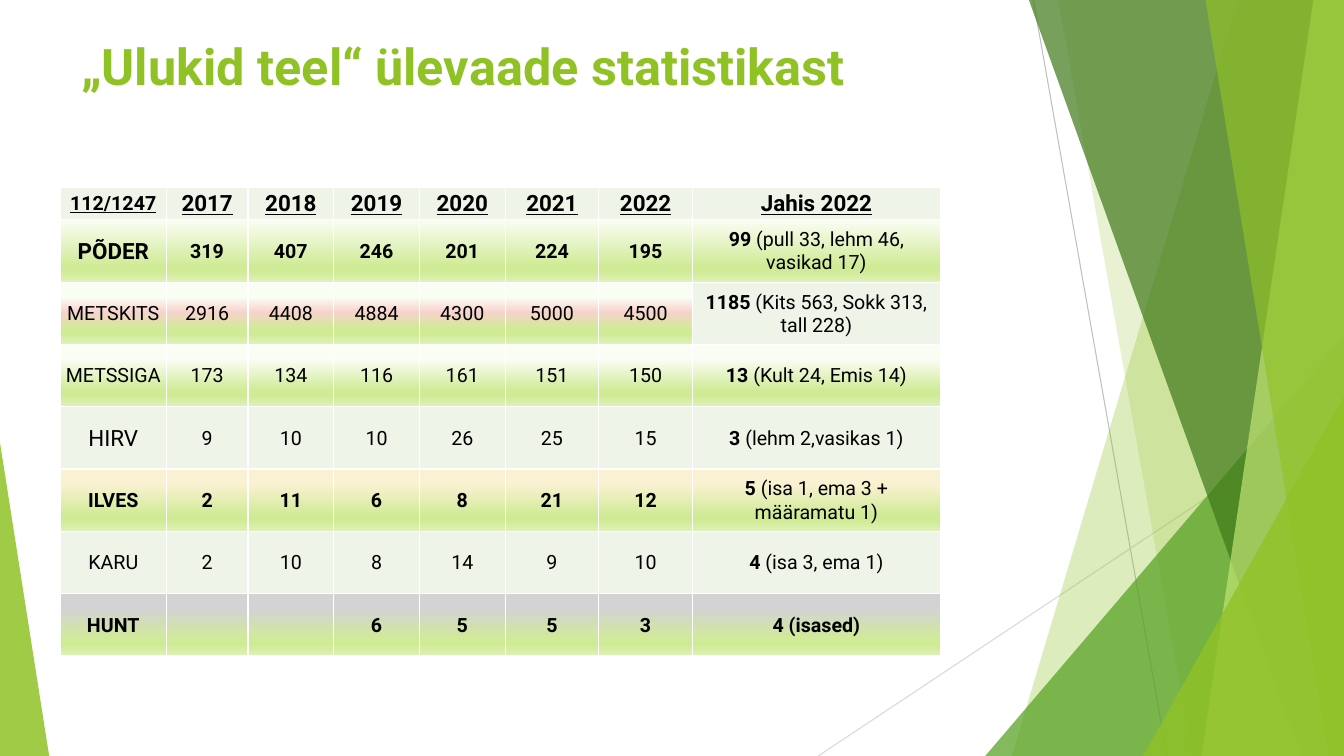
"""Build the slide with the yearly table of game animals on roads."""
from dataclasses import dataclass

from lxml.etree import SubElement as Sub
from pptx import Presentation
from pptx.dml.color import RGBColor as Rgb
from pptx.enum.shapes import MSO_CONNECTOR as Link, MSO_SHAPE as Form
from pptx.enum.text import MSO_ANCHOR as Anchor, PP_ALIGN as Align
from pptx.oxml.ns import qn
from pptx.util import Cm, Pt


@dataclass(frozen=True)
class Theme:
    """Colours, font and type sizes."""
    font: str = "Roboto"
    ink: str = "000000"
    white: str = "FFFFFF"
    lime: str = "90C226"
    green: str = "54A021"
    dark: str = "3F7819"
    light: str = "C0E474"
    pale: str = "EEF4E8"
    mint: str = "FAFDF3"
    rose: str = "F8D2CC"
    sand: str = "FAF1D2"
    grey: str = "D3D3D3"
    grass: tuple = ((74, "D0EB96"), (83, "D0EB96"), (100, "DFF1B9"))
    head: int = 36
    large: int = 16
    body: int = 14


T = Theme()
WIDE, HIGH = 33.87, 19.05
TITLE = "„Ulukid teel“ ülevaade statistikast"
TITLE_BOX = (1.8, 0.64, 22.94, 2.03)

HEADER = ["112/1247", "2017", "2018", "2019", "2020", "2021", "2022", "Jahis 2022"]
ROWS = [
    ("PÕDER", T.large, True, "moose", [319, 407, 246, 201, 224, 195],
     "99", " (pull 33, lehm 46, vasikad 17)"),
    ("METSKITS", T.body, False, "deer", [2916, 4408, 4884, 4300, 5000, 4500],
     "1185", " (Kits 563, Sokk 313, tall 228)"),
    ("METSSIGA", T.body, False, "boar", [173, 134, 116, 161, 151, 150],
     "13 ", "(Kult 24, Emis 14)"),
    ("HIRV", T.large, False, "plain", [9, 10, 10, 26, 25, 15],
     "3", " (lehm 2,vasikas 1)"),
    ("ILVES", T.body, True, "lynx", [2, 11, 6, 8, 21, 12],
     "5", " (isa 1, ema 3 + määramatu 1)"),
    ("KARU", T.body, False, "plain", [2, 10, 8, 14, 9, 10],
     "4", " (isa 3, ema 1)"),
    ("HUNT", T.body, True, "wolf", ["", "", 6, 5, 5, 3],
     "4 (isased)", ""),
]
FILLS = {
    "plain": (),
    "moose": ((0, T.mint), *T.grass),
    "deer": ((24, T.mint), (49, T.rose), *T.grass),
    "boar": ((24, T.mint), *T.grass),
    "lynx": ((24, T.sand), *T.grass),
    "wolf": ((24, T.grey), *T.grass),
}
COLS = [2.67, 2.06, 2.16, 2.16, 2.16, 2.36, 2.36, 6.25]
TABLE_AT = (1.52, 4.72)
HEAD_ROW, BODY_ROW = 0.82, 1.57
INSET = 0.03

LINES = [
    ((26.04, 0, 29.41, HIGH), "BFBFBF"),
    ((WIDE, 10.24, 20.62, HIGH), "D9D9D9"),
]
FACETS = [
    ("wedge", (31.19, 25.5), T.lime, 30),
    ("wedge", (26.67, 30.05), T.lime, 20),
    ("right", (9.04, 10.59), T.green, 72),
    ("wedge", (25.93, 32.79), T.dark, 70),
    ("wedge", (33.1, 30.28), T.light, 70),
    ("wedge", (30.38, 33.48), T.lime, 65),
    ("right", (5.06, 9.07), T.lime, 80),
    ("left", (1.24, 7.9), T.lime, 85),
]


def cms(vals):
    """Turn numbers into lengths."""
    return [Cm(val) for val in vals]


def add_run(para, text, size, color, bold, under=False):
    """Add one styled run."""
    run = para.add_run()
    run.text = text
    font = run.font
    font.name, font.size, font.bold = T.font, Pt(size), bold
    font.underline = under
    font.color.rgb = Rgb.from_string(color)


def add_line(shapes, ends, color):
    """Draw one thin line."""
    line = shapes.add_connector(Link.STRAIGHT, *cms(ends))
    line.line.color.rgb = Rgb.from_string(color)
    line.line.width = Pt(0.75)
    Sub(line._element.spPr, qn("a:effectLst"))


def add_facet(shapes, kind, dims, color, alpha):
    """Draw one translucent wedge or corner triangle."""
    if kind == "wedge":
        top, base = dims
        pen = shapes.build_freeform(Cm(top), 0)
        pen.add_line_segments([cms(spot) for spot in
                               ((WIDE, 0), (WIDE, HIGH), (base, HIGH))])
        facet = pen.convert_to_shape()
    else:
        wide, high = dims
        left = WIDE - wide if kind == "right" else 0
        facet = shapes.add_shape(Form.ISOSCELES_TRIANGLE,
                                 *cms((left, HIGH - high, wide, high)))
        facet.adjustments[0] = 1 if kind == "right" else 0
    facet.shadow.inherit = False
    facet.fill.solid()
    facet.fill.fore_color.rgb = Rgb.from_string(color)
    tint = next(facet._element.spPr.iter(qn("a:srgbClr")))
    Sub(tint, qn("a:alpha"), val=str(alpha * 1000))
    facet.line.fill.background()


def paint(cell, stops):
    """Give a cell white borders and a plain or graded fill."""
    props = cell._tc.get_or_add_tcPr()
    for side in ("lnL", "lnR", "lnT", "lnB"):
        edge = Sub(props, qn("a:" + side), w=str(Pt(1)))
        Sub(Sub(edge, qn("a:solidFill")), qn("a:srgbClr"), val=T.white)
    if not stops:
        cell.fill.solid()
        cell.fill.fore_color.rgb = Rgb.from_string(T.pale)
        return
    cell.fill.gradient()
    cell.fill.gradient_angle = 270
    ramp = next(props.iter(qn("a:gsLst")))
    for old in list(ramp):
        ramp.remove(old)
    for place, color in stops:
        stop = Sub(ramp, qn("a:gs"), pos=str(place * 1000))
        Sub(stop, qn("a:srgbClr"), val=color)


def fill_cell(cell, runs, stops=(), under=False):
    """Lay out one cell from (text, size, bold) runs."""
    cell.margin_left = cell.margin_right = cell.margin_top = Cm(INSET)
    cell.margin_bottom = 0
    cell.vertical_anchor = Anchor.MIDDLE
    para = cell.text_frame.paragraphs[0]
    para.alignment = Align.CENTER
    for text, size, bold in runs:
        if text:
            add_run(para, text, size, T.ink, bold, under)
    paint(cell, stops)


def add_stats(shapes):
    """Build the table."""
    high = HEAD_ROW + BODY_ROW * len(ROWS)
    table = shapes.add_table(len(ROWS) + 1, len(COLS),
                             *cms((*TABLE_AT, sum(COLS), high))).table
    table.first_row = table.horz_banding = False
    for col, wide in zip(table.columns, COLS):
        col.width = Cm(wide)
    for num, row in enumerate(table.rows):
        row.height = Cm(BODY_ROW if num else HEAD_ROW)
    for col, text in enumerate(HEADER):
        size = T.large if col else T.body
        fill_cell(table.cell(0, col), [(text, size, True)], under=True)
    for num, (name, size, bold, fill, years, count, rest) in enumerate(ROWS, 1):
        cells = [[(name, size, bold)]]
        cells += [[(str(year), T.body, bold)] for year in years]
        cells.append([(count, T.body, True), (rest, T.body, False)])
        for col, runs in enumerate(cells):
            bare = fill == "deer" and col == len(COLS) - 1
            fill_cell(table.cell(num, col), runs, () if bare else FILLS[fill])


def main():
    """Build and save the slide."""
    deck = Presentation()
    deck.slide_width, deck.slide_height = cms((WIDE, HIGH))
    shapes = deck.slides.add_slide(deck.slide_layouts[5]).shapes
    for ends, color in LINES:
        add_line(shapes, ends, color)
    for facet in FACETS:
        add_facet(shapes, *facet)
    title = shapes.title
    title.left, title.top, title.width, title.height = cms(TITLE_BOX)
    title.text_frame.vertical_anchor = Anchor.MIDDLE
    para = title.text_frame.paragraphs[0]
    para.alignment = Align.LEFT
    add_run(para, TITLE, T.head, T.lime, True)
    add_stats(shapes)
    deck.save("out.pptx")


if __name__ == "__main__":
    main()
